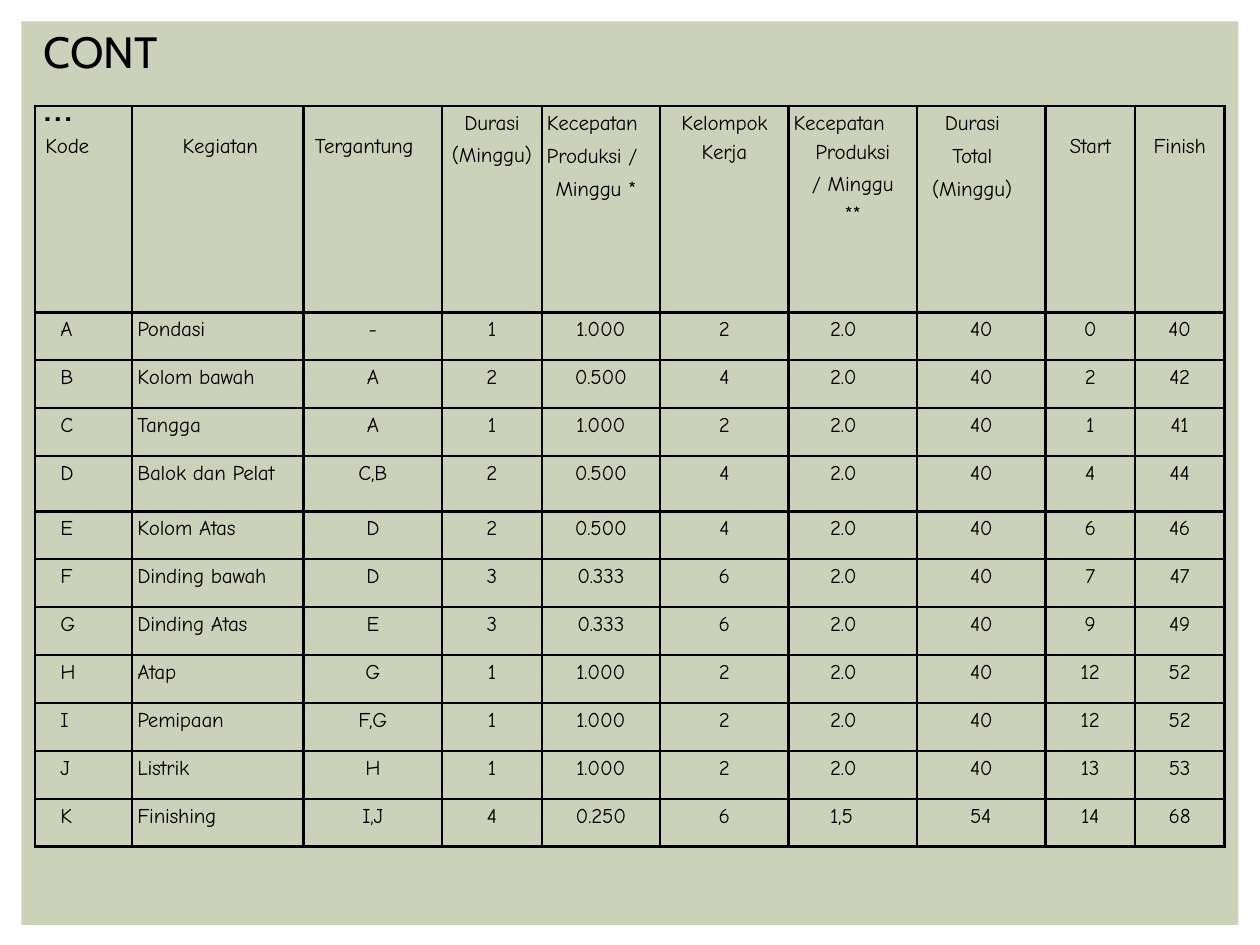
import pptx
import pptx.dml.color
import pptx.enum.shapes
import pptx.enum.text
import pptx.oxml
import pptx.oxml.ns
import pptx.util

Inches = pptx.util.Inches
Pt = pptx.util.Pt
ALIGN = pptx.enum.text.PP_ALIGN
BLACK = pptx.dml.color.RGBColor(0x00, 0x00, 0x00)
SAGE = pptx.dml.color.RGBColor(0xCC, 0xD1, 0xB9)

COL_WIDTHS = [0.77, 1.36, 1.1, 0.79, 0.94, 1.02, 1.02, 1.02, 0.71, 0.71]
HEADER_HEIGHT, ROW_HEIGHT, TALL_ROW_HEIGHT = 1.64, 0.38, 0.44
TALL_ROW = 4
COLUMN_INDENTS = {0: 0.2, 1: 0.04, 6: 0.33, 7: 0.42}

ACTIVITIES = [
    ("A", "Pondasi", "-", "1", "1.000", "2", "2.0", "40", "0", "40"),
    ("B", "Kolom bawah", "A", "2", "0.500", "4", "2.0", "40", "2", "42"),
    ("C", "Tangga", "A", "1", "1.000", "2", "2.0", "40", "1", "41"),
    ("D", "Balok dan Pelat", "C,B", "2", "0.500", "4", "2.0", "40", "4", "44"),
    ("E", "Kolom Atas", "D", "2", "0.500", "4", "2.0", "40", "6", "46"),
    ("F", "Dinding bawah", "D", "3", "0.333", "6", "2.0", "40", "7", "47"),
    ("G", "Dinding Atas", "E", "3", "0.333", "6", "2.0", "40", "9", "49"),
    ("H", "Atap", "G", "1", "1.000", "2", "2.0", "40", "12", "52"),
    ("I", "Pemipaan", "F,G", "1", "1.000", "2", "2.0", "40", "12", "52"),
    ("J", "Listrik", "H", "1", "1.000", "2", "2.0", "40", "13", "53"),
    ("K", "Finishing", "I,J", "4", "0.250", "6", "1,5", "54", "14", "68"),
]


def line(text, left=None, first=0, spacing=None, before=0):
    return {"text": text, "left": left, "first": first,
            "spacing": spacing, "before": before}


HEADERS = [
    [line("Kode", 0.08)],
    [line("Kegiatan", 0.4)],
    [line("Tergantung", 0.09)],
    [line("Durasi", spacing=16.9), line("(Minggu)", spacing=18.6)],
    [line("Kecepatan", 0.04, spacing=16.9),
     line("Produksi / Minggu *", 0.11, -0.07, 18.5, 0.7)],
    [line("Kelompok Kerja", spacing=16.9)],
    [line("Kecepatan", 0.04, spacing=16.9), line("Produksi", spacing=16.9),
     line("/ Minggu", spacing=17.9), line("**", spacing=17.7)],
    [line("Durasi", 0.22, spacing=16.9),
     line("Total (Minggu)", 0.12, 0.16, 18.5, 0.7)],
    [line("Start")],
    [line("Finish")],
]


def add_run(p, text, font, size):
    r = p.add_run()
    r.text = text
    r.font.name = font
    r.font.size = Pt(size)
    r.font.color.rgb = BLACK
    return r


def add_line(p, item):
    if item["left"] is None:
        p.alignment = ALIGN.CENTER
    else:
        p.alignment = ALIGN.LEFT
        pPr = p._p.get_or_add_pPr()
        pPr.set("marL", str(Inches(item["left"])))
        pPr.set("indent", str(Inches(item["first"])))
    if item["spacing"]:
        p.line_spacing = Pt(item["spacing"])
    p.space_before = Pt(item["before"])
    r = add_run(p, item["text"], "Comic Neue", 12)
    if len(item["text"]) > 1:
        r._r.get_or_add_rPr().set("spc", "-10")


def add_borders(cell):
    tcPr = cell._tc.get_or_add_tcPr()
    for side in ("lnL", "lnR", "lnT", "lnB"):
        tcPr.append(pptx.oxml.parse_xml(
            f'<a:{side} {pptx.oxml.ns.nsdecls("a")} w="{Pt(1.5)}">'
            f'<a:solidFill><a:srgbClr val="{BLACK}"/></a:solidFill></a:{side}>'))


def fill_cell(cell, items, top=0):
    cell.margin_left = cell.margin_right = cell.margin_bottom = 0
    cell.margin_top = Inches(top)
    add_borders(cell)
    cell.fill.background()
    tf = cell.text_frame
    for i, item in enumerate(items):
        add_line(tf.add_paragraph() if i else tf.paragraphs[0], item)


def add_panel(s):
    sp = s.shapes.add_shape(
        pptx.enum.shapes.MSO_SHAPE.RECTANGLE,
        Inches(0.17), Inches(0.17), Inches(9.66), Inches(7.17))
    sp.shadow.inherit = False
    sp.fill.solid()
    sp.fill.fore_color.rgb = SAGE
    sp.line.fill.background()


def add_schedule(s):
    heights = [HEADER_HEIGHT] + [ROW_HEIGHT] * len(ACTIVITIES)
    heights[TALL_ROW] = TALL_ROW_HEIGHT
    table = s.shapes.add_table(
        len(heights), len(COL_WIDTHS), Inches(0.28), Inches(0.84),
        Inches(sum(COL_WIDTHS)), Inches(sum(heights))).table
    table.first_row = table.horz_banding = False
    for column, width in zip(table.columns, COL_WIDTHS):
        column.width = Inches(width)
    for row, height in zip(table.rows, heights):
        row.height = Inches(height)
    for col, items in enumerate(HEADERS):
        fill_cell(table.cell(0, col), items, 0 if items[0]["spacing"] else 0.23)
    for row, values in enumerate(ACTIVITIES, 1):
        for col, value in enumerate(values):
            fill_cell(table.cell(row, col),
                      [line(value, COLUMN_INDENTS.get(col), spacing=17)])


def add_title(s):
    sp = s.shapes.add_textbox(Inches(0.25), Inches(0.15), Inches(1.29), Inches(0.52))
    tf = sp.text_frame
    tf.word_wrap = True
    add_run(tf.paragraphs[0], "CONT…", "Cabin", 25)


def main():
    prs = pptx.Presentation()
    prs.slide_width, prs.slide_height = Inches(10), Inches(7.5)
    s = prs.slides.add_slide(prs.slide_layouts[6])
    add_panel(s)
    add_schedule(s)
    add_title(s)
    prs.save("out.pptx")


if __name__ == "__main__":
    main()
